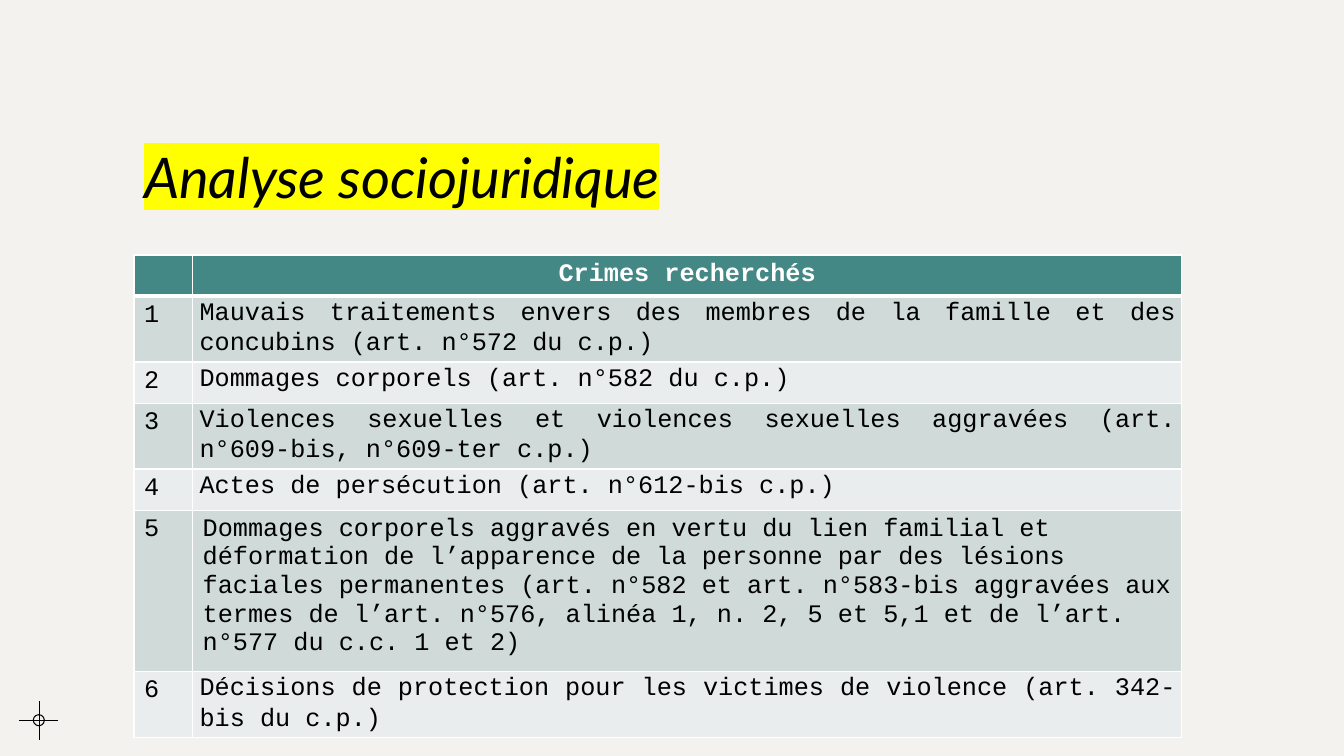
from lxml.etree import SubElement
from pptx import Presentation
from pptx.dml.color import RGBColor
from pptx.enum.shapes import MSO_CONNECTOR as Connector, MSO_SHAPE as Shape
from pptx.enum.text import MSO_ANCHOR as Anchor, PP_ALIGN as Align
from pptx.oxml import parse_xml
from pptx.oxml.ns import nsdecls, qn
from pptx.util import Inches, Pt

COLORS = {
    "background": "F3F2EE",
    "ink": "000000",
    "white": "FFFFFF",
    "highlight": "FFFF00",
    "header": "448885",
    "odd": "CFDAD9",
    "even": "E9EDED",
}
TITLE_FONT = {"name": "Lato", "size": Pt(40), "italic": True}
BODY_FONT = {"name": "Courier New", "size": Pt(18), "bold": False}
HEADER_FONT = {**BODY_FONT, "bold": True}
JUSTIFIED = {"alignment": Align.JUSTIFY, "line_spacing": 1.07}
TIGHT_MARGINS = {
    "margin_left": Inches(0.07),
    "margin_top": Inches(0.01),
    "margin_right": Inches(0.06),
    "margin_bottom": Inches(0),
}
CRIMES = [
    ("Mauvais traitements envers des membres de la famille et des concubins "
     "(art. n°572 du c.p.)", True),
    ("Dommages corporels (art. n°582 du c.p.)", True),
    ("Violences sexuelles et violences sexuelles aggravées "
     "(art. n°609-bis, n°609-ter c.p.)", True),
    ("Actes de persécution (art. n°612-bis c.p.)", True),
    ("Dommages corporels aggravés en vertu du lien familial et déformation de "
     "l’apparence de la personne par des lésions faciales permanentes "
     "(art. n°582 et art. n°583-bis aggravées aux termes de l’art. n°576, "
     "alinéa 1, n. 2, 5 et 5,1 et de l’art. n°577 du c.c. 1 et 2)", False),
    ("Décisions de protection pour les victimes de violence "
     "(art. 342-bis du c.p.)", True),
]


def rgb(name):
    """Return the named colour."""
    return RGBColor.from_string(COLORS[name])


def apply(target, values):
    """Set every attribute in values on the target."""
    for name, value in values.items():
        setattr(target, name, value)


def write(frame, text, font, color="ink", layout=None):
    """Write one paragraph into a text frame and return its span."""
    para = frame.paragraphs[0]
    apply(para, layout or {})
    span = para.add_run()
    span.text = text
    apply(span.font, font)
    span.font.color.rgb = rgb(color)
    return span


def add_crosshair(page):
    """Draw the crossed circle in the lower left corner."""
    for ends in ((0.19, 7.15, 0.58, 7.15), (0.39, 7.34, 0.39, 6.95)):
        line = page.shapes.add_connector(Connector.STRAIGHT, *map(Inches, ends))
        line.line.color.rgb = rgb("ink")
        line.line.width = Pt(0.75)
        SubElement(line._element.spPr, qn("a:effectLst"))
    ring = page.shapes.add_shape(
        Shape.OVAL, Inches(0.33), Inches(7.09), Inches(0.11), Inches(0.11))
    ring.shadow.inherit = False
    ring.fill.background()
    ring.line.color.rgb = rgb("ink")
    ring.line.width = Pt(0.75)


def add_title(page, text):
    """Add the highlighted title, resting on the bottom of its box."""
    box = page.shapes.add_textbox(
        Inches(1.33), Inches(0.4), Inches(10.38), Inches(1.73))
    apply(box.text_frame, {"word_wrap": True, "vertical_anchor": Anchor.BOTTOM})
    span = write(box.text_frame, text, TITLE_FONT, layout={"line_spacing": 1.2})
    marker = parse_xml(
        f'<a:highlight {nsdecls("a")}>'
        f'<a:srgbClr val="{COLORS["highlight"]}"/></a:highlight>')
    span.font._element.find(qn("a:solidFill")).addnext(marker)


def style_cell(cell, fill, bottom=1):
    """Fill a cell and give it white borders."""
    cell.fill.solid()
    cell.fill.fore_color.rgb = rgb(fill)
    properties = cell._tc.get_or_add_tcPr()
    for index, side in enumerate("LRTB"):
        width = Pt(bottom if side == "B" else 1)
        border = parse_xml(
            f'<a:ln{side} {nsdecls("a")} w="{width}"><a:solidFill>'
            f'<a:srgbClr val="{COLORS["white"]}"/></a:solidFill></a:ln{side}>')
        properties.insert(index, border)


def add_crime_table(page):
    """Add the numbered table of crimes."""
    count = len(CRIMES) + 1
    table = page.shapes.add_table(
        count, 2, Inches(1.33), Inches(2.53),
        Inches(10.39), Inches(0.41 * count)).table
    for column, width in zip(table.columns, (0.58, 9.81)):
        column.width = Inches(width)
    for cell in table.rows[0].cells:
        style_cell(cell, "header", bottom=3)
    write(table.cell(0, 1).text_frame, "Crimes recherchés", HEADER_FONT,
          "white", {"alignment": Align.CENTER})
    for number, (crime, justified) in enumerate(CRIMES, 1):
        label, entry = table.rows[number].cells
        for cell in (label, entry):
            style_cell(cell, "odd" if number % 2 else "even")
        write(label.text_frame, str(number), BODY_FONT)
        write(entry.text_frame, crime, BODY_FONT,
              layout=JUSTIFIED if justified else None)
        if justified:
            apply(entry, TIGHT_MARGINS)


def main():
    """Build and save the slide."""
    deck = Presentation()
    apply(deck, {"slide_width": Inches(13.33), "slide_height": Inches(7.5)})
    page = deck.slides.add_slide(deck.slide_layouts[6])
    page.background.fill.solid()
    page.background.fill.fore_color.rgb = rgb("background")
    add_crosshair(page)
    add_title(page, "Analyse sociojuridique")
    add_crime_table(page)
    deck.save("out.pptx")


if __name__ == "__main__":
    main()
